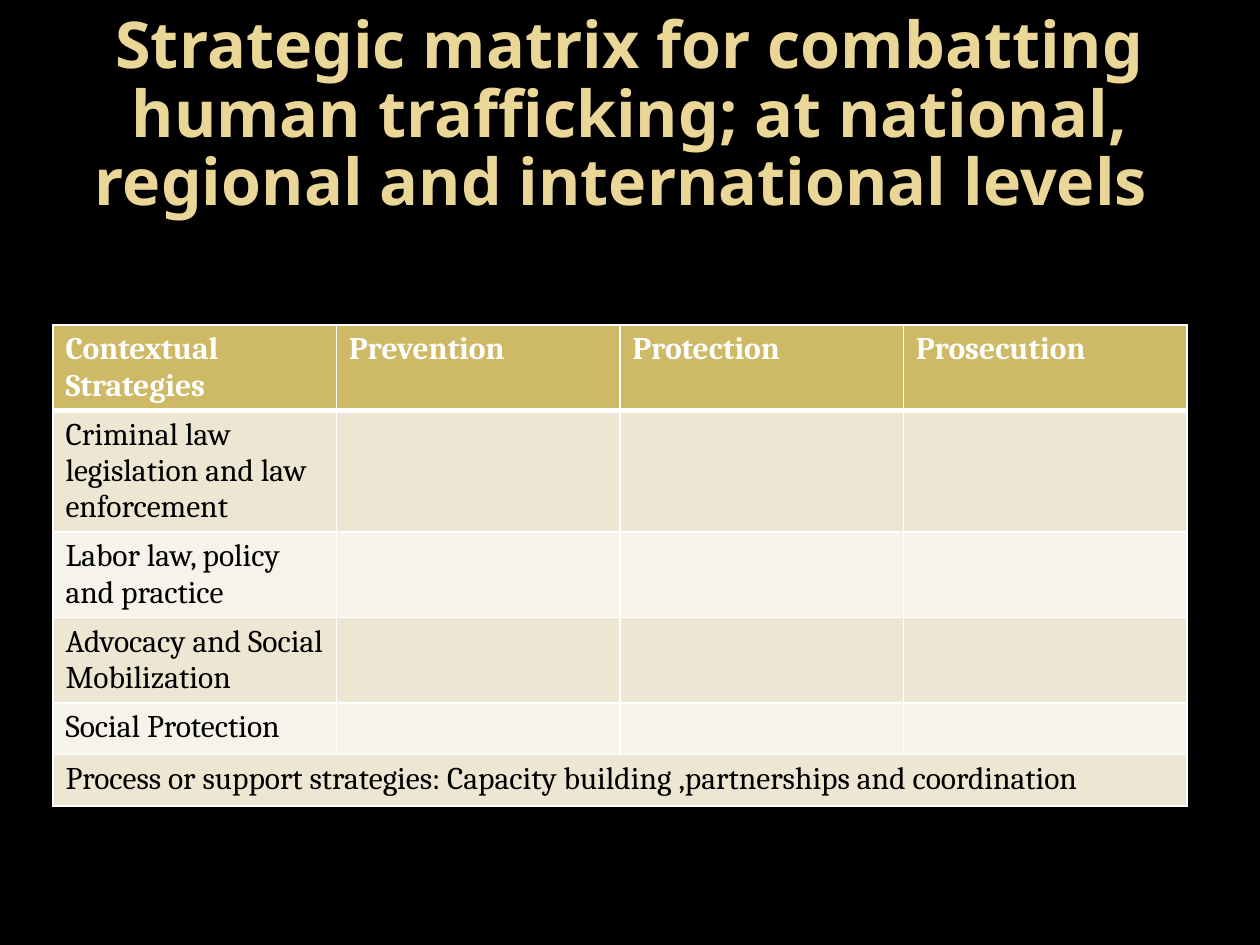
from typing import NamedTuple, Optional

import pptx
import pptx.dml.color
import pptx.enum.text
import pptx.oxml
import pptx.oxml.ns
import pptx.util

Inches = pptx.util.Inches
Pt = pptx.util.Pt
RGBColor = pptx.dml.color.RGBColor
PP_ALIGN = pptx.enum.text.PP_ALIGN

BLACK = RGBColor(0x00, 0x00, 0x00)
WHITE = RGBColor(0xFF, 0xFF, 0xFF)
PALE_GOLD = RGBColor(0xEA, 0xD6, 0x96)
GOLD = RGBColor(0xCE, 0xB9, 0x66)
BAND_DARK = RGBColor(0xED, 0xE6, 0xD3)
BAND_LIGHT = RGBColor(0xF6, 0xF3, 0xEA)

COL_WIDTH = 2.25
ROW_HEIGHT = 0.41
THIN, THICK = 1, 3


class Row(NamedTuple):
    texts: tuple[str, ...]
    merged: bool = False


TITLE = ("Strategic matrix for combatting human trafficking; "
         "at national, regional and international levels ")
ROWS = [
    Row(("Contextual Strategies", "Prevention", "Protection", "Prosecution")),
    Row(("Criminal law legislation and law enforcement",)),
    Row(("Labor law, policy and practice",)),
    Row(("Advocacy and Social Mobilization",)),
    Row(("Social Protection",)),
    Row(("Process or support strategies: Capacity building ,"
         "partnerships and coordination",), merged=True),
]


def write(tf, text: str, *, size: float, font: str, color: RGBColor,
          bold: bool = False, align: Optional[PP_ALIGN] = None,
          spacing: Optional[float] = None) -> None:
    p = tf.paragraphs[0]
    p.alignment = align
    p.line_spacing = spacing
    # The paragraph font also sizes cells that hold no text.
    p.font.size = Pt(size)
    if not text:
        return
    r = p.add_run()
    r.text = text
    r.font.size = Pt(size)
    r.font.name = font
    r.font.bold = bold
    r.font.color.rgb = color


def set_borders(cell, **widths: float) -> None:
    """Draw white borders; widths in points are keyed L, R, T and B."""
    tc_pr = cell._tc.get_or_add_tcPr()
    for i, (side, width) in enumerate(widths.items()):
        ln = pptx.oxml.parse_xml(
            f'<a:ln{side} {pptx.oxml.ns.nsdecls("a")} w="{Pt(width)}">'
            f'<a:solidFill><a:srgbClr val="{WHITE}"/></a:solidFill>'
            f'</a:ln{side}>')
        tc_pr.insert(i, ln)


def add_title(slide) -> None:
    sp = slide.shapes.title
    sp.left, sp.top = Inches(0.5), Inches(0.3)
    sp.width, sp.height = Inches(9), Inches(1.25)
    tf = sp.text_frame
    tf.word_wrap = True
    tf.auto_size = pptx.enum.text.MSO_AUTO_SIZE.NONE
    tf.vertical_anchor = pptx.enum.text.MSO_ANCHOR.MIDDLE
    write(tf, TITLE, size=36.9, font="Noto Sans", color=PALE_GOLD, bold=True,
          align=PP_ALIGN.CENTER, spacing=0.88)


def add_matrix(slide, rows: list[Row]) -> None:
    n_cols = len(rows[0].texts)
    table = slide.shapes.add_table(
        len(rows), n_cols, Inches(0.42), Inches(2.58),
        Inches(COL_WIDTH * n_cols), Inches(ROW_HEIGHT * len(rows))).table
    for i, row in enumerate(rows):
        header = i == 0
        fill = GOLD if header else BAND_DARK if i % 2 else BAND_LIGHT
        for j in range(n_cols):
            cell = table.cell(i, j)
            cell.fill.solid()
            cell.fill.fore_color.rgb = fill
            set_borders(cell, L=THIN, R=THIN, T=THICK if i == 1 else THIN,
                        B=THICK if header else THIN)
            write(cell.text_frame, row.texts[j] if j < len(row.texts) else "",
                  size=18, font="Cambria", color=WHITE if header else BLACK,
                  bold=header)
        if row.merged:
            table.cell(i, 0).merge(table.cell(i, n_cols - 1))


def main() -> None:
    prs = pptx.Presentation()
    prs.slide_width, prs.slide_height = Inches(10), Inches(7.5)
    slide = prs.slides.add_slide(prs.slide_layouts.get_by_name("Title Only"))
    slide.background.fill.solid()
    slide.background.fill.fore_color.rgb = BLACK
    add_title(slide)
    add_matrix(slide, ROWS)
    prs.save("out.pptx")


if __name__ == "__main__":
    main()
